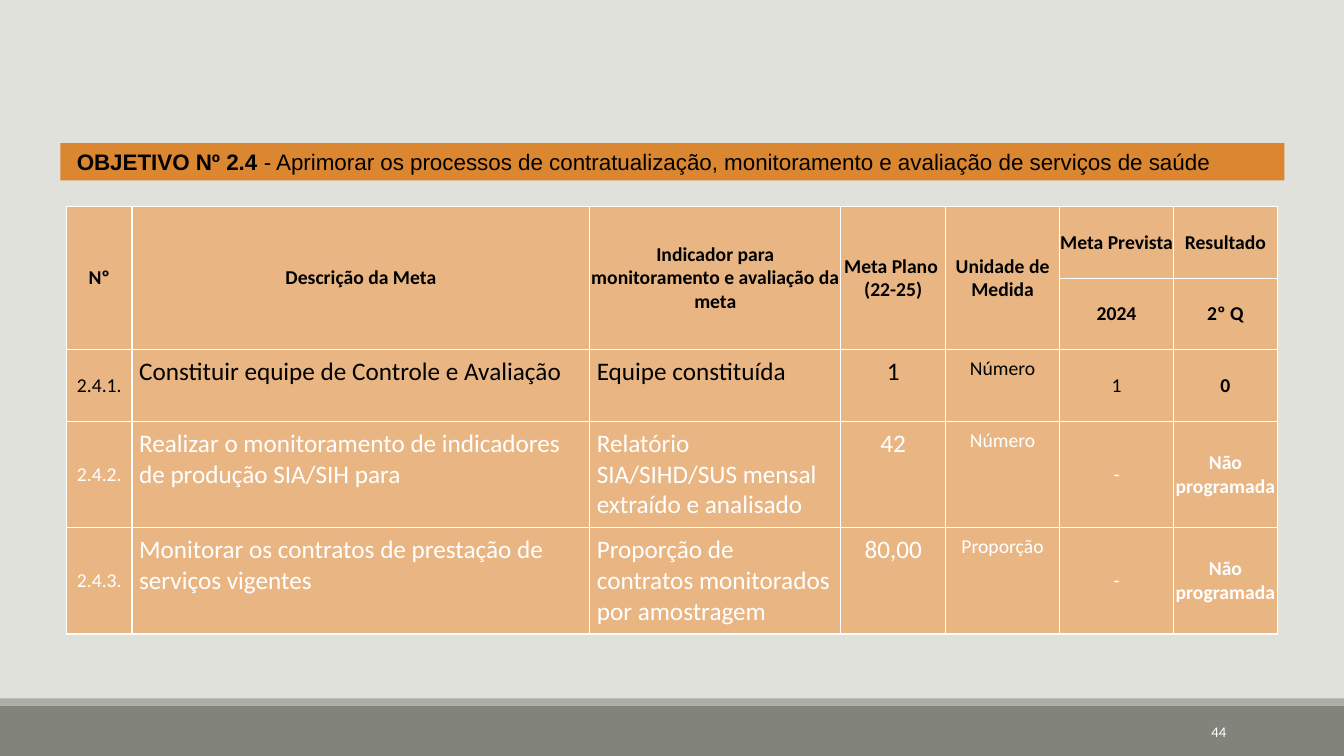
from dataclasses import dataclass

from lxml.etree import SubElement
from pptx import Presentation
from pptx.dml.color import RGBColor
from pptx.enum.shapes import MSO_SHAPE as Shape
from pptx.enum.text import MSO_ANCHOR as Anchor, MSO_AUTO_SIZE as AutoSize, PP_ALIGN as Align
from pptx.oxml.ns import qn
from pptx.util import Inches, Pt


@dataclass(frozen=True)
class Theme:
    background: str = "E1E1DB"
    footer: str = "82847C"
    footer_edge: str = "ACADA8"
    bar: str = "DB8631"
    cell: str = "E9B683"
    dark: str = "000000"
    light: str = "FFFFFF"
    title_font: str = "Arial"
    body_font: str = "Calibri"
    title_size: float = 16
    large: float = 18
    small: float = 14
    number_size: float = 10.5


@dataclass(frozen=True)
class CellStyle:
    size: float
    bold: bool = False
    align: Align = Align.CENTER
    anchor: Anchor = Anchor.MIDDLE
    inset: float = 0


@dataclass(frozen=True)
class Column:
    heading: str
    width: float
    style: CellStyle
    subheading: str = ""


@dataclass(frozen=True)
class Goal:
    values: tuple[str, ...]
    height: float
    color: str


@dataclass(frozen=True)
class Band:
    top: float
    height: float
    color: str


THEME = Theme()
SLIDE_WIDTH, SLIDE_HEIGHT = 13.33, 7.5
HEADER_HEIGHT = 0.71

HEADER = CellStyle(THEME.small, bold=True)
PLAIN = CellStyle(THEME.small)
PROSE = CellStyle(THEME.large, align=Align.LEFT, anchor=Anchor.TOP, inset=0.07)
TARGET = CellStyle(THEME.large, anchor=Anchor.TOP, inset=0.07)
UNIT = CellStyle(THEME.small, anchor=Anchor.TOP, inset=0.07)

COLUMNS = (
    Column("Nº", 0.65, PLAIN),
    Column("Descrição da Meta", 4.54, PROSE),
    Column("Indicador para monitoramento e avaliação da meta", 2.49, PROSE),
    Column("Meta Plano \n(22-25)", 1.04, TARGET),
    Column("Unidade de Medida", 1.13, UNIT),
    Column("Meta Prevista", 1.13, PLAIN, "2024"),
    Column("Resultado", 1.03, HEADER, "2º Q"),
)
GOALS = (
    Goal(("2.4.1.", "Constituir equipe de Controle e Avaliação", "Equipe constituída",
          "1", "Número", "1", "0"), 0.71, THEME.dark),
    Goal(("2.4.2.", "Realizar o monitoramento de indicadores de produção SIA/SIH para",
          "Relatório SIA/SIHD/SUS mensal extraído e analisado",
          "42", "Número", "-", "Não programada"), 1.05, THEME.light),
    Goal(("2.4.3.", "Monitorar os contratos de prestação de serviços vigentes",
          "Proporção de contratos monitorados por amostragem",
          "80,00", "Proporção", "-", "Não programada"), 1.05, THEME.light),
)
BANDS = (Band(7, 0.5, THEME.footer), Band(6.93, 0.07, THEME.footer_edge))


def paint(fill, color: str) -> None:
    fill.solid()
    fill.fore_color.rgb = RGBColor.from_string(color)


def add_span(para, text: str, font: str, size: float, color: str, bold: bool = False) -> None:
    span = para.add_run()
    span.text = text
    span.font.name = font
    span.font.size = Pt(size)
    span.font.bold = bold
    span.font.color.rgb = RGBColor.from_string(color)


def add_band(page, band: Band) -> None:
    box = page.shapes.add_shape(Shape.RECTANGLE, 0, Inches(band.top),
                                Inches(SLIDE_WIDTH), Inches(band.height))
    box.shadow.inherit = False
    box.line.fill.background()
    paint(box.fill, band.color)


def set_borders(cell) -> None:
    properties = cell._tc.get_or_add_tcPr()
    for position, side in enumerate(("lnL", "lnR", "lnT", "lnB")):
        line = SubElement(properties, qn(f"a:{side}"), w=str(Pt(1)))
        fill = SubElement(line, qn("a:solidFill"))
        SubElement(fill, qn("a:srgbClr"), val=THEME.light)
        properties.insert(position, line)


def write_cell(cell, text: str, style: CellStyle, color: str) -> None:
    inset = Inches(style.inset)
    cell.margin_left = cell.margin_right = cell.margin_top = cell.margin_bottom = inset
    cell.vertical_anchor = style.anchor
    for index, line in enumerate(text.split("\n")):
        frame = cell.text_frame
        para = frame.add_paragraph() if index else frame.paragraphs[0]
        para.alignment = style.align
        add_span(para, line, THEME.body_font, style.size, color, style.bold)


def add_objective(page) -> None:
    box = page.shapes.title
    box.left, box.top = Inches(0.6), Inches(1.42)
    box.width, box.height = Inches(12.14), Inches(0.37)
    paint(box.fill, THEME.bar)
    frame = box.text_frame
    frame.auto_size = AutoSize.NONE
    frame.word_wrap = True
    frame.vertical_anchor = Anchor.TOP
    para = frame.paragraphs[0]
    para.alignment = Align.LEFT
    for text, bold in (
        (" ", False),
        ("OBJETIVO Nº 2.4", True),
        (" - Aprimorar os processos de contratualização, monitoramento e avaliação "
         "de serviços de saúde", False),
    ):
        add_span(para, text, THEME.title_font, THEME.title_size, THEME.dark, bold)


def add_goal_table(page) -> None:
    heights = [HEADER_HEIGHT] * 2 + [goal.height for goal in GOALS]
    frame = page.shapes.add_table(
        len(heights), len(COLUMNS), Inches(0.66), Inches(2.05),
        Inches(sum(column.width for column in COLUMNS)), Inches(sum(heights)))
    table = frame.table
    table.first_row = table.horz_banding = False
    for row, height in zip(table.rows, heights):
        row.height = Inches(height)
    for cell in table.iter_cells():
        paint(cell.fill, THEME.cell)
        set_borders(cell)

    for index, column in enumerate(COLUMNS):
        table.columns[index].width = Inches(column.width)
        top, below = table.cell(0, index), table.cell(1, index)
        write_cell(top, column.heading, HEADER, THEME.dark)
        if column.subheading:
            write_cell(below, column.subheading, HEADER, THEME.dark)
        else:
            top.merge(below)
        for row, goal in enumerate(GOALS, start=2):
            write_cell(table.cell(row, index), goal.values[index], column.style, goal.color)


def add_page_number(page) -> None:
    box = page.shapes.add_textbox(Inches(10.83), Inches(7.06), Inches(1.43), Inches(0.4))
    frame = box.text_frame
    frame.word_wrap = True
    frame.vertical_anchor = Anchor.MIDDLE
    para = frame.paragraphs[0]
    para.alignment = Align.RIGHT
    add_span(para, "44", THEME.body_font, THEME.number_size, THEME.light)


def main() -> None:
    deck = Presentation()
    deck.slide_width, deck.slide_height = Inches(SLIDE_WIDTH), Inches(SLIDE_HEIGHT)
    page = deck.slides.add_slide(deck.slide_layouts.get_by_name("Title Only"))
    paint(page.background.fill, THEME.background)
    for band in BANDS:
        add_band(page, band)
    add_goal_table(page)
    add_objective(page)
    add_page_number(page)
    deck.save("out.pptx")


if __name__ == "__main__":
    main()
